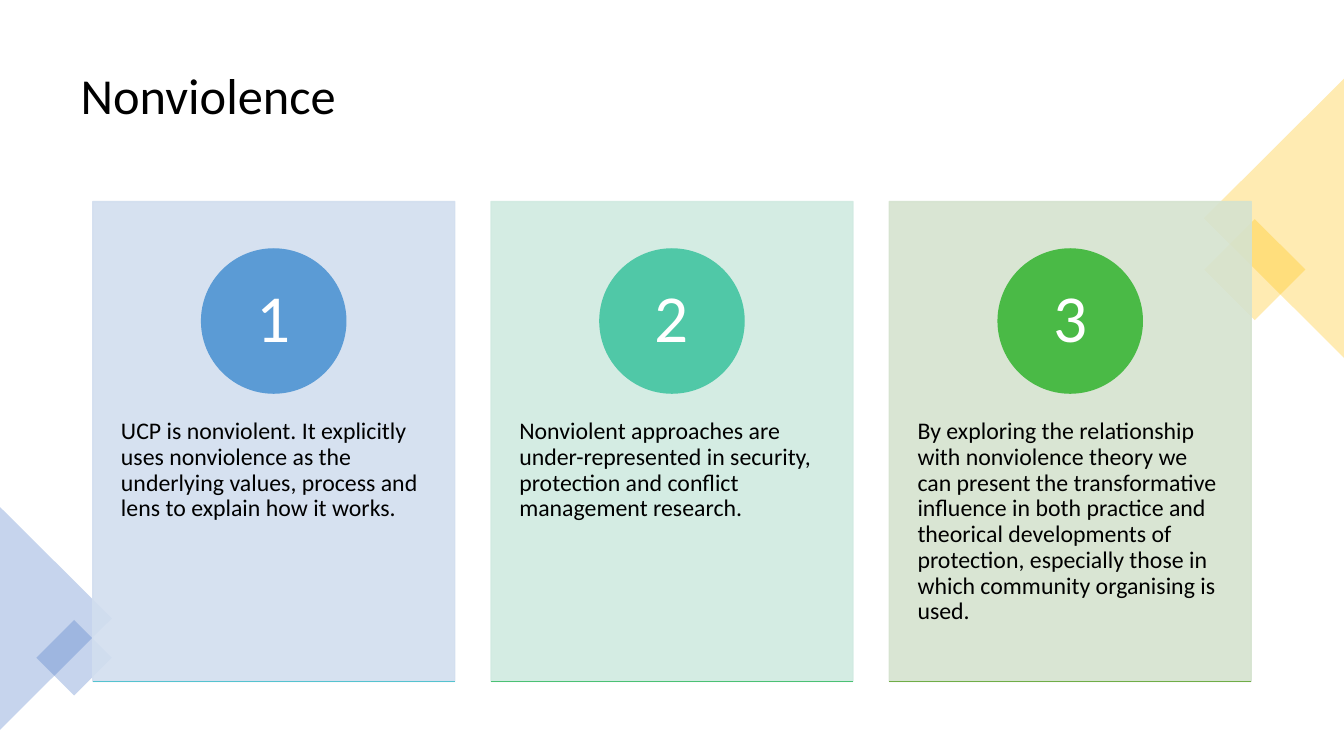
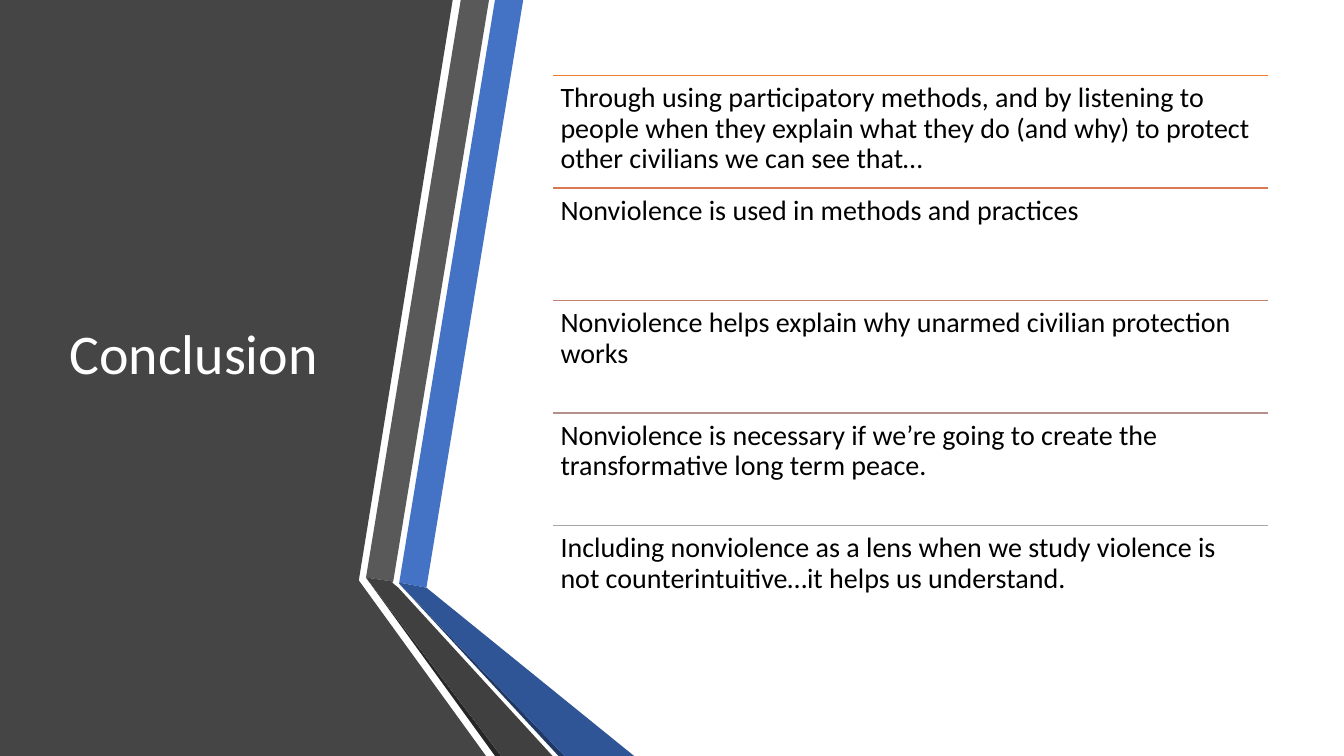
from lxml.etree import SubElement
from pptx import Presentation
from pptx.dml.color import RGBColor
from pptx.enum.shapes import MSO_CONNECTOR, MSO_SHAPE
from pptx.enum.text import MSO_ANCHOR, MSO_AUTO_SIZE, PP_ALIGN
from pptx.oxml.ns import qn
from pptx.util import Inches, Pt

FONT = "Calibri"
BLACK = RGBColor(0x00, 0x00, 0x00)
WHITE = RGBColor(0xFF, 0xFF, 0xFF)
BLUE = RGBColor(0x44, 0x72, 0xC4)
DARK_BLUE = RGBColor(0x2F, 0x55, 0x97)
NAVY = RGBColor(0x20, 0x38, 0x64)
GOLD = RGBColor(0xFF, 0xC0, 0x00)
PANEL_GRAY = RGBColor(0x45, 0x45, 0x45)
MID_GRAY = RGBColor(0x59, 0x59, 0x59)
DARK_GRAY = RGBColor(0x40, 0x40, 0x40)
NEAR_BLACK = RGBColor(0x26, 0x26, 0x26)

CARD_BLUE = RGBColor(0xD2, 0xDE, 0xEF)
CARD_MINT = RGBColor(0xD0, 0xEA, 0xE1)
CARD_GREEN = RGBColor(0xD5, 0xE3, 0xCF)
CIRCLE_BLUE = RGBColor(0x5B, 0x9B, 0xD5)
CIRCLE_TEAL = RGBColor(0x50, 0xC8, 0xA7)
CIRCLE_GREEN = RGBColor(0x4A, 0xBA, 0x46)
RULE_CYAN = RGBColor(0x55, 0xC3, 0xCF)
RULE_MINT = RGBColor(0x4B, 0xC1, 0x74)
RULE_GREEN = RGBColor(0x70, 0xAD, 0x47)
RULE_ORANGE = RGBColor(0xED, 0x7D, 0x31)
RULE_COPPER = RGBColor(0xD8, 0x7A, 0x51)
RULE_ROSE = RGBColor(0xC4, 0x81, 0x70)
RULE_TAUPE = RGBColor(0xB4, 0x90, 0x8B)
RULE_GRAY = RGBColor(0xA5, 0xA5, 0xA5)


def write_text(shape, text, size, color, insets=(0.1, 0.05),
               anchor=MSO_ANCHOR.TOP, alignment=PP_ALIGN.LEFT):
    frame = shape.text_frame
    frame.text = text
    frame.word_wrap = True
    frame.auto_size = MSO_AUTO_SIZE.NONE
    frame.vertical_anchor = anchor
    frame.margin_left = frame.margin_right = Inches(insets[0])
    frame.margin_top = frame.margin_bottom = Inches(insets[1])
    paragraph = frame.paragraphs[0]
    paragraph.alignment = alignment
    paragraph.line_spacing = 0.9
    paragraph.font.name = FONT
    paragraph.font.size = Pt(size)
    paragraph.font.color.rgb = color


def paint(shape, color, opacity=100, outlined=False):
    shape.shadow.inherit = False
    shape.fill.solid()
    shape.fill.fore_color.rgb = color
    if outlined:
        shape.line.color.rgb = color
        shape.line.width = Pt(1)
    else:
        shape.line.fill.background()
    if opacity < 100:
        for color_element in shape.element.iter(qn("a:srgbClr")):
            SubElement(color_element, qn("a:alpha"), val=str(opacity * 1000))


presentation = Presentation()
presentation.slide_width = Inches(13.33)
presentation.slide_height = Inches(7.5)

titles = [
    ("Nonviolence", 36, BLACK, (0.7, 0.35, 11.93, 1.24)),
    ("Conclusion", 40, WHITE, (0.59, 0.75, 3.04, 5.58)),
]
for text, size, color, box in titles:
    slide = presentation.slides.add_slide(presentation.slide_layouts[5])
    title = slide.shapes.title
    title.left, title.top, title.width, title.height = map(Inches, box)
    write_text(title, text, size, color, anchor=MSO_ANCHOR.MIDDLE)

nonviolence_slide, conclusion_slide = presentation.slides
rules = []

decorations = [
    (MSO_SHAPE.RECTANGLE, (12.09, 2.32, 0.71, 0.71), 45, GOLD),
    (MSO_SHAPE.ISOSCELES_TRIANGLE, (11.25, 1.47, 2.77, 1.39), 270, GOLD),
    (MSO_SHAPE.ISOSCELES_TRIANGLE, (-0.55, 5.58, 2.21, 1.11), 90, BLUE),
    (MSO_SHAPE.RECTANGLE, (0.47, 6.26, 0.53, 0.53), 45, BLUE),
]
for kind, box, rotation, color in decorations:
    decoration = nonviolence_slide.shapes.add_shape(kind, *map(Inches, box))
    decoration.rotation = rotation
    paint(decoration, color, opacity=30)

CARD_LEFT, CARD_TOP, CARD_WIDTH, CARD_HEIGHT = 0.92, 2, 3.59, 4.76
CARD_STEP = 3.95
CIRCLE_SIZE = 1.43
cards = [
    ("UCP is nonviolent. It explicitly uses nonviolence as the underlying "
     "values, process and lens to explain how it works.",
     CARD_BLUE, CIRCLE_BLUE, RULE_CYAN),
    ("Nonviolent approaches are under-represented in security, protection "
     "and conflict management research.",
     CARD_MINT, CIRCLE_TEAL, RULE_MINT),
    ("By exploring the relationship with nonviolence theory we can present "
     "the transformative influence in both practice and theorical "
     "developments of protection, especially those in which community "
     "organising is used.",
     CARD_GREEN, CIRCLE_GREEN, RULE_GREEN),
]
for index, (text, card_color, circle_color, rule_color) in enumerate(cards):
    left = CARD_LEFT + index * CARD_STEP
    card = nonviolence_slide.shapes.add_shape(
        MSO_SHAPE.RECTANGLE, Inches(left), Inches(CARD_TOP),
        Inches(CARD_WIDTH), Inches(CARD_HEIGHT))
    paint(card, card_color, opacity=90, outlined=True)
    body = nonviolence_slide.shapes.add_textbox(
        Inches(left), Inches(3.8), Inches(CARD_WIDTH), Inches(2.86))
    write_text(body, text, 17, BLACK, insets=(0.28, 0.36))
    circle = nonviolence_slide.shapes.add_shape(
        MSO_SHAPE.OVAL, Inches(left + (CARD_WIDTH - CIRCLE_SIZE) / 2),
        Inches(2.47), Inches(CIRCLE_SIZE), Inches(CIRCLE_SIZE))
    paint(circle, circle_color, outlined=True)
    write_text(circle, str(index + 1), 48, WHITE, insets=(0.11, 0.01),
               anchor=MSO_ANCHOR.MIDDLE, alignment=PP_ALIGN.CENTER)
    rules.append((nonviolence_slide, left, CARD_TOP + CARD_HEIGHT,
                  CARD_WIDTH, rule_color))

panels = [
    (PANEL_GRAY, [(0, 0), (3.53, 0), (4.49, 0), (3.56, 5.75), (3.56, 5.76),
                  (4.82, 7.5), (0, 7.5)]),
    (BLUE, [(3.96, 5.78), (4.23, 5.83), (5.19, 0), (4.91, 0)]),
    (MID_GRAY, [(4.85, 0), (4.57, 0), (3.63, 5.73), (3.9, 5.77)]),
    (NEAR_BLACK, [(3.63, 5.73), (4.91, 7.5), (4.97, 7.5)]),
    (NAVY, [(3.96, 5.79), (5.54, 7.5), (5.6, 7.5)]),
    (DARK_BLUE, [(3.96, 5.79), (5.6, 7.5), (6.29, 7.5), (4.23, 5.83),
                 (3.96, 5.78)]),
    (DARK_GRAY, [(5.48, 7.5), (3.95, 5.83), (3.89, 5.78), (3.9, 5.77),
                 (3.63, 5.73), (4.97, 7.5)]),
]
for color, points in panels:
    corners = [(Inches(x), Inches(y)) for x, y in points]
    outline = conclusion_slide.shapes.build_freeform(*corners[0])
    outline.add_line_segments(corners[1:], close=True)
    paint(outline.convert_to_shape(), color)

conclusion_title = conclusion_slide.shapes.title.element
conclusion_title.getparent().append(conclusion_title)

LIST_LEFT, LIST_TOP, LIST_WIDTH, LIST_HEIGHT = 5.48, 0.75, 7.1, 5.58
conclusions = [
    ("Through using participatory methods, and by listening to people when "
     "they explain what they do (and why) to protect other civilians we can "
     "see that…", RULE_ORANGE),
    ("Nonviolence is used in methods and practices", RULE_COPPER),
    ("Nonviolence helps explain why unarmed civilian protection works",
     RULE_ROSE),
    ("Nonviolence is necessary if we’re going to create the transformative "
     "long term peace.", RULE_TAUPE),
    ("Including nonviolence as a lens when we study violence is not "
     "counterintuitive…it helps us understand.", RULE_GRAY),
]
row_height = LIST_HEIGHT / len(conclusions)
for index, (text, rule_color) in enumerate(conclusions):
    top = LIST_TOP + index * row_height
    row = conclusion_slide.shapes.add_textbox(
        Inches(LIST_LEFT), Inches(top), Inches(LIST_WIDTH), Inches(row_height))
    write_text(row, text, 20, BLACK, insets=(0.08, 0.08))
    rules.append((conclusion_slide, LIST_LEFT, top, LIST_WIDTH, rule_color))

for slide, left, top, width, color in rules:
    rule = slide.shapes.add_connector(
        MSO_CONNECTOR.STRAIGHT, Inches(left), Inches(top),
        Inches(left + width), Inches(top))
    rule.line.color.rgb = color
    rule.line.width = Pt(1)
    SubElement(rule.element.spPr, qn("a:effectLst"))

presentation.save("out.pptx")
